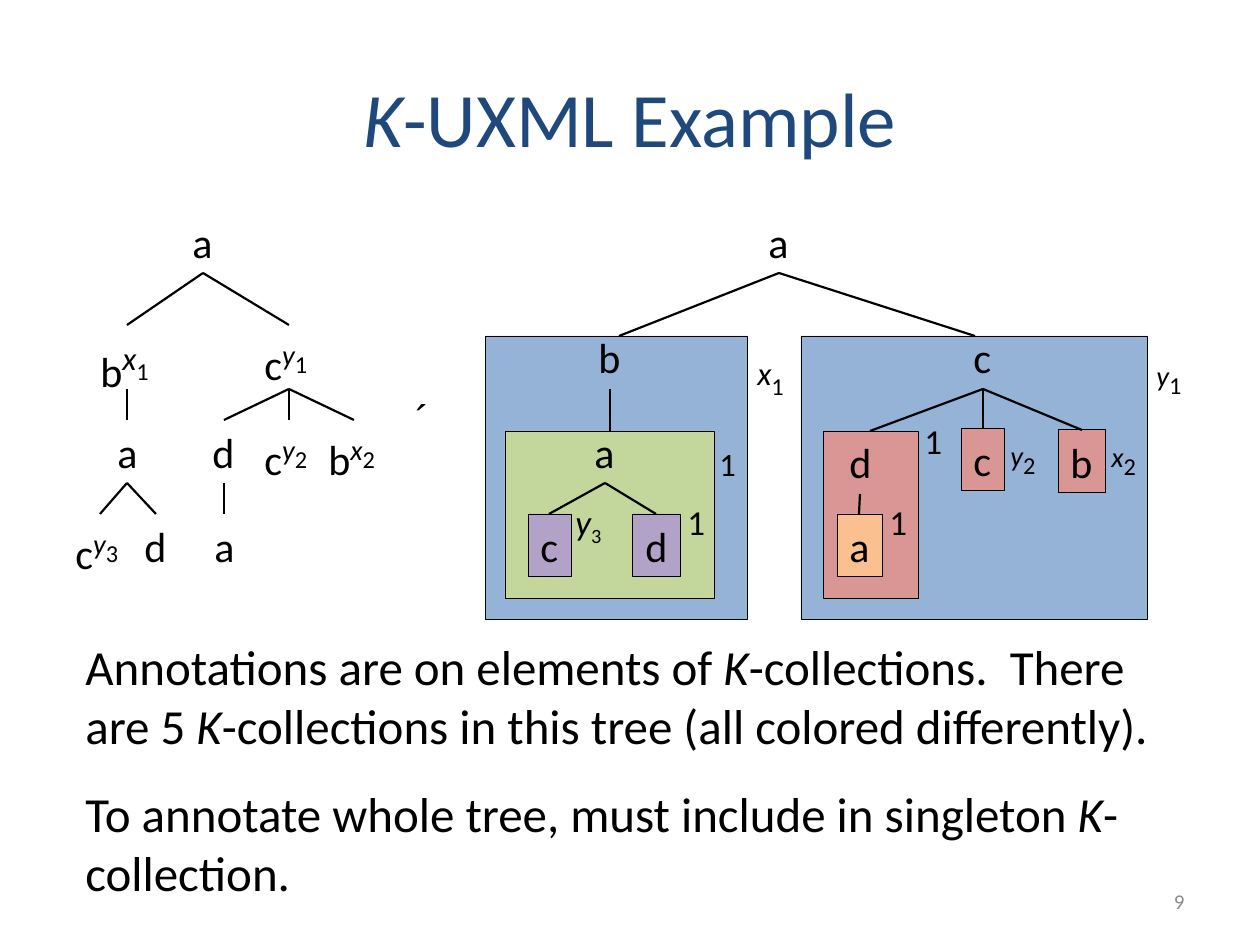
import pptx
import pptx.util
import pptx.dml.color
import pptx.enum.shapes
import pptx.enum.text
import lxml.etree
from pptx.oxml.ns import qn

THEME = {
    "font": "Calibri", "symbol_font": "Arial",
    "ink": "000000", "title": "1F497D", "muted": "8C8C8C",
    "blue": "95B3D7", "red": "D99694", "green": "C3D69B",
    "purple": "B3A2C7", "orange": "FAC090",
    "title_pt": 44, "body_pt": 28, "node_pt": 24, "mark_pt": 20, "page_pt": 12,
    "sub_pt": 24, "box_line": 0.5, "edge_line": 1.25,
}
PX = 914400 / 126
NODE_H = 63
NODE_W = {"a": 45, "b": 48, "c": 43, "d": 48}
LEVELS = (210, 325, 420, 514)

# Content: a run is (text, format); formats name size, slant and baseline
SUP = {"size": 28, "italic": True, "base": 30}
BIG_SUP = SUP | {"size": 32}
SUB = {"size": THEME["sub_pt"], "base": 15}
ITALIC = {"italic": True}

TITLE = [("K", ITALIC), ("-UXML Example", {})]
NOTES = [
    (630, [("Annotations are on elements of ", {}), ("K", ITALIC),
           ("-collections.  There are 5 ", {}), ("K", ITALIC),
           ("-collections in this tree (all colored differently).", {})]),
    (777, [("To annotate whole tree, must include in singleton ", {}),
           ("K", ITALIC), ("-collection.", {})]),
]

# Collections: left, top, width, height, colour
COLLECTIONS = [
    (801, 336, 347, 284, "blue"), (486, 336, 262, 284, "blue"),
    (823, 431, 95, 168, "red"), (505, 431, 210, 168, "green"),
]
# Boxed leaves: name, left, top, colour
LEAVES = [
    ("c", 961, 428, "red"), ("b", 1058, 430, "red"), ("c", 528, 514, "purple"),
    ("a", 837, 514, "orange"), ("d", 633, 514, "purple"),
]
# Plain nodes: name, left, top
NODES = [
    ("a", 180, LEVELS[0]), ("a", 105, LEVELS[2]), ("d", 200, LEVELS[2]),
    ("a", 202, LEVELS[3]), ("d", 132, LEVELS[3]),
    ("a", 756, LEVELS[0]), ("b", 586, LEVELS[1]), ("c", 961, LEVELS[1]),
    ("a", 582, LEVELS[2]), ("d", 837, 430),
]
# Annotated nodes: name, variable, index, left, top, width, variable format
ANNOTATED = [
    ("b", "x", "1", 88, LEVELS[1], 78, BIG_SUP),
    ("c", "y", "1", 252, LEVELS[1], 73, SUP),
    ("c", "y", "2", 252, LEVELS[2], 73, SUP),
    ("b", "x", "2", 316, LEVELS[2], 77, SUP),
    ("c", "y", "3", 63, LEVELS[3], 73, SUP),
]
# Marks beside collections: runs, left, top, width, height, wrap
MARKS = [
    ([("1", {})], 877, 494, 53, 55, True),
    ([("1", {})], 675, 494, 53, 55, True),
    ([("1", {})], 912, 413, 53, 55, True),
    ([("y", ITALIC), ("3", {"base": -25})], 563, 494, 53, 55, True),
    ([("x", BIG_SUP), ("1", SUB)], 745, 340, 58, 58, False),
    ([("1", {"size": 32, "base": 30})], 707, 431, 44, 58, False),
    ([("y", SUP), ("1", SUB)], 1144, 346, 57, 53, False),
    ([("y", SUP), ("2", SUB)], 998, 426, 57, 53, False),
    ([("x", SUP), ("2", SUB)], 1099, 427, 54, 53, False),
]
# Edges: parent point, child points
EDGES = [
    ((203, 273), [(127, 325), (289, 325)]),
    ((127, 389), [(127, 420)]),
    ((127, 483), [(100, 514), (156, 514)]),
    ((289, 389), [(224, 420), (289, 420), (354, 420)]),
    ((224, 483), [(224, 514)]),
    ((779, 273), [(619, 336), (975, 336)]),
    ((610, 389), [(610, 431)]),
    ((605, 483), [(549, 514), (656, 514)]),
    ((983, 389), [(870, 431), (983, 429), (1082, 430)]),
    ((860, 494), [(859, 514)]),
]


def emu(*lengths):
    return [pptx.util.Emu(round(n * PX)) for n in lengths]


def rgb(name):
    return pptx.dml.color.RGBColor.from_string(THEME[name])


def write(sp, runs, size, color="ink", font="font", align="LEFT",
          anchor="TOP", wrap=False, grow=True):
    tf = sp.text_frame
    auto = pptx.enum.text.MSO_AUTO_SIZE
    frame = {"word_wrap": wrap,
             "vertical_anchor": pptx.enum.text.MSO_ANCHOR[anchor],
             "auto_size": auto.SHAPE_TO_FIT_TEXT if grow else auto.NONE}
    for key, value in frame.items():
        setattr(tf, key, value)
    p = tf.paragraphs[0]
    p.alignment = pptx.enum.text.PP_ALIGN[align]
    for text, fmt in runs:
        r = p.add_run()
        r.text = text
        values = {"name": THEME[font], "italic": fmt.get("italic", False),
                  "size": pptx.util.Pt(fmt.get("size", size))}
        for key, value in values.items():
            setattr(r.font, key, value)
        r.font.color.rgb = rgb(color)
        if "base" in fmt:
            r.font._element.set("baseline", str(fmt["base"] * 1000))


def add_text(s, box, runs, size, **fmt):
    write(s.shapes.add_textbox(*emu(*box)), runs, size, **fmt)


def add_box(s, box, color):
    sp = s.shapes.add_shape(pptx.enum.shapes.MSO_SHAPE.RECTANGLE, *emu(*box))
    sp.shadow.inherit = False
    sp.fill.solid()
    sp.fill.fore_color.rgb = rgb(color)
    sp.line.color.rgb = rgb("ink")
    sp.line.width = pptx.util.Pt(THEME["box_line"])
    return sp


def add_edge(s, start, end):
    line = s.shapes.add_connector(pptx.enum.shapes.MSO_CONNECTOR.STRAIGHT,
                                  *emu(*start, *end))
    line.line.color.rgb = rgb("ink")
    line.line.width = pptx.util.Pt(THEME["edge_line"])
    lxml.etree.SubElement(line._element.spPr, qn("a:effectLst"))


def main():
    prs = pptx.Presentation()
    prs.slide_width, prs.slide_height = emu(1260, 945)
    s = prs.slides.add_slide(prs.slide_layouts[6])
    node_pt = THEME["node_pt"]

    # Nested collections and their leaves
    for *box, color in COLLECTIONS:
        add_box(s, box, color)
    for name, x, y, color in LEAVES:
        sp = add_box(s, (x, y, NODE_W[name], NODE_H), color)
        write(sp, [(name, {})], node_pt)

    # Title and page number
    add_text(s, (63, 38, 1134, 157), TITLE, THEME["title_pt"], color="title",
             align="CENTER", anchor="MIDDLE", wrap=True, grow=False)
    add_text(s, (903, 876, 294, 50), [("9", {})], THEME["page_pt"], color="muted",
             align="RIGHT", anchor="MIDDLE", wrap=True, grow=False)

    # Trees
    for name, x, y in NODES:
        add_text(s, (x, y, NODE_W[name], NODE_H), [(name, {})], node_pt)
    for name, var, index, x, y, w, fmt in ANNOTATED:
        add_text(s, (x, y, w, NODE_H), [(name, {}), (var, fmt), (index, SUB)], node_pt)
    for parent, children in EDGES:
        for child in children:
            add_edge(s, parent, child)

    # Annotations and the sign between the trees
    for runs, *box, wrap in MARKS:
        add_text(s, box, runs, THEME["mark_pt"], wrap=wrap)
    add_text(s, (403, 387, 84, NODE_H), [("´", {})], node_pt,
             font="symbol_font", wrap=True)

    # Explanation
    for y, runs in NOTES:
        add_text(s, (73, y, 1124, 131), runs, THEME["body_pt"], wrap=True)

    prs.save("out.pptx")


if __name__ == "__main__":
    main()
